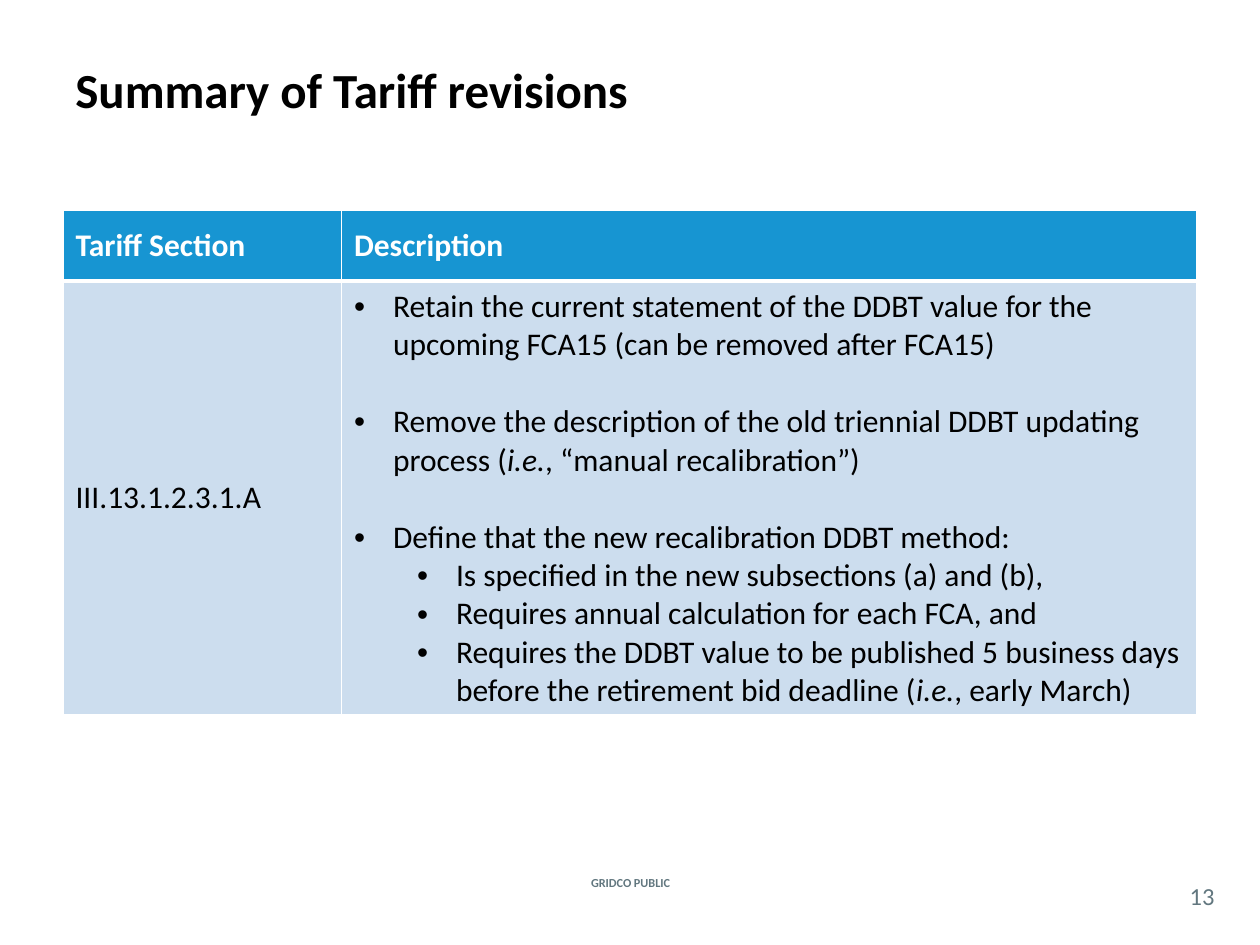
from dataclasses import dataclass

from lxml.etree import SubElement
from pptx import Presentation
from pptx.dml.color import RGBColor
from pptx.enum.text import MSO_ANCHOR, PP_ALIGN
from pptx.oxml import parse_xml
from pptx.oxml.ns import nsdecls, qn
from pptx.util import Inches, Pt

TITLE = "Summary of Tariff revisions"
FOOTER = "GRIDCO PUBLIC"
PAGE = "13"
HEADERS = ("Tariff Section", "Description")
SECTION = "III.13.1.2.3.1.A"
# (level, text); asterisks enclose italics
DESCRIPTION = [
    (0, "Retain the current statement of the DDBT value for the upcoming FCA15 (can be removed after FCA15)"),
    (0, "Remove the description of the old triennial DDBT updating process (*i.e.*, “manual recalibration”)"),
    (0, "Define that the new recalibration DDBT method:"),
    (1, "Is specified in the new subsections (a) and (b),"),
    (1, "Requires annual calculation for each FCA, and"),
    (1, "Requires the DDBT value to be published 5 business days before the retirement bid deadline (*i.e.*, early March)"),
]
COL_WIDTHS = (2.21, 6.79)
ROW_HEIGHTS = (0.56, 3.44)
HANGING, LEVEL_STEP = 0.31, 0.5


@dataclass(frozen=True)
class Theme:
    font: str = "Calibri"
    text: str = "000000"
    white: str = "FFFFFF"
    header: str = "1795D2"
    body: str = "CCDDEE"
    muted: str = "62777F"
    title_size: int = 28
    table_size: int = 18
    page_size: int = 14
    footer_size: int = 7
    item_gap: int = 22


THEME = Theme()


def add_runs(p, text, size, color=THEME.text, bold=False):
    """Write text into a paragraph, with the parts between asterisks in italics."""
    for i, part in enumerate(text.split("*")):
        r = p.add_run()
        r.text = part
        r.font.name = THEME.font
        r.font.size = Pt(size)
        r.font.bold = bold
        r.font.italic = i % 2 == 1
        r.font.color.rgb = RGBColor.from_string(color)


def add_text(slide, box, text, align=PP_ALIGN.LEFT, inset=None, **fmt):
    tf = slide.shapes.add_textbox(*map(Inches, box)).text_frame
    tf.word_wrap = True
    tf.vertical_anchor = MSO_ANCHOR.MIDDLE
    if inset is not None:
        tf.margin_left = tf.margin_right = tf.margin_top = tf.margin_bottom = Inches(inset)
    p = tf.paragraphs[0]
    p.alignment = align
    add_runs(p, text, **fmt)


def style_cell(cell, fill, bottom=1):
    """Fill the cell and give it white borders; bottom is a width in points."""
    cell.vertical_anchor = MSO_ANCHOR.MIDDLE
    cell.fill.solid()
    cell.fill.fore_color.rgb = RGBColor.from_string(fill)
    tcPr = cell._tc.get_or_add_tcPr()
    widths = {"lnL": 1, "lnR": 1, "lnT": 1, "lnB": bottom}
    for i, (side, width) in enumerate(widths.items()):
        tcPr.insert(i, parse_xml(
            f'<a:{side} {nsdecls("a")} w="{Pt(width)}"><a:solidFill>'
            f'<a:srgbClr val="{THEME.white}"/></a:solidFill></a:{side}>'))


def add_bullet(p, level):
    p.level = level
    pPr = p._p.get_or_add_pPr()
    pPr.set("marL", str(Inches(HANGING + level * LEVEL_STEP)))
    pPr.set("indent", str(-Inches(HANGING)))
    SubElement(pPr, qn("a:buFont"), typeface="Arial")
    SubElement(pPr, qn("a:buChar"), char="•")


def add_tariff_table(slide):
    frame = slide.shapes.add_table(2, 2, Inches(0.5), Inches(1.67),
                                   Inches(sum(COL_WIDTHS)), Inches(sum(ROW_HEIGHTS)))
    table = frame.table
    for col, width in zip(table.columns, COL_WIDTHS):
        col.width = Inches(width)
    for row, height in zip(table.rows, ROW_HEIGHTS):
        row.height = Inches(height)
    for i, header in enumerate(HEADERS):
        style_cell(table.cell(0, i), THEME.header, bottom=3)
        add_runs(table.cell(0, i).text_frame.paragraphs[0], header,
                 THEME.table_size, THEME.white, bold=True)
        style_cell(table.cell(1, i), THEME.body)
        # The top border of the body row matches the header rule
        table.cell(1, i)._tc.tcPr.find(qn("a:lnT")).set("w", str(Pt(3)))
    add_runs(table.cell(1, 0).text_frame.paragraphs[0], SECTION, THEME.table_size)
    tf = table.cell(1, 1).text_frame
    for i, (level, text) in enumerate(DESCRIPTION):
        p = tf.add_paragraph() if i else tf.paragraphs[0]
        if i and level == 0:
            p.space_before = Pt(THEME.item_gap)
        add_bullet(p, level)
        add_runs(p, text, THEME.table_size)


def main():
    prs = Presentation()
    prs.slide_width, prs.slide_height = Inches(10), Inches(7.5)
    slide = prs.slides.add_slide(prs.slide_layouts[6])
    add_text(slide, (4.27, 6.92, 1.47, 0.17), FOOTER, align=PP_ALIGN.CENTER,
             size=THEME.footer_size, color=THEME.muted, bold=True)
    add_text(slide, (9.33, 6.96, 0.42, 0.29), PAGE, align=PP_ALIGN.CENTER, inset=0,
             size=THEME.page_size, color=THEME.muted)
    add_text(slide, (0.5, 0.08, 9, 1.25), TITLE, size=THEME.title_size, bold=True)
    add_tariff_table(slide)
    prs.save("out.pptx")


if __name__ == "__main__":
    main()
